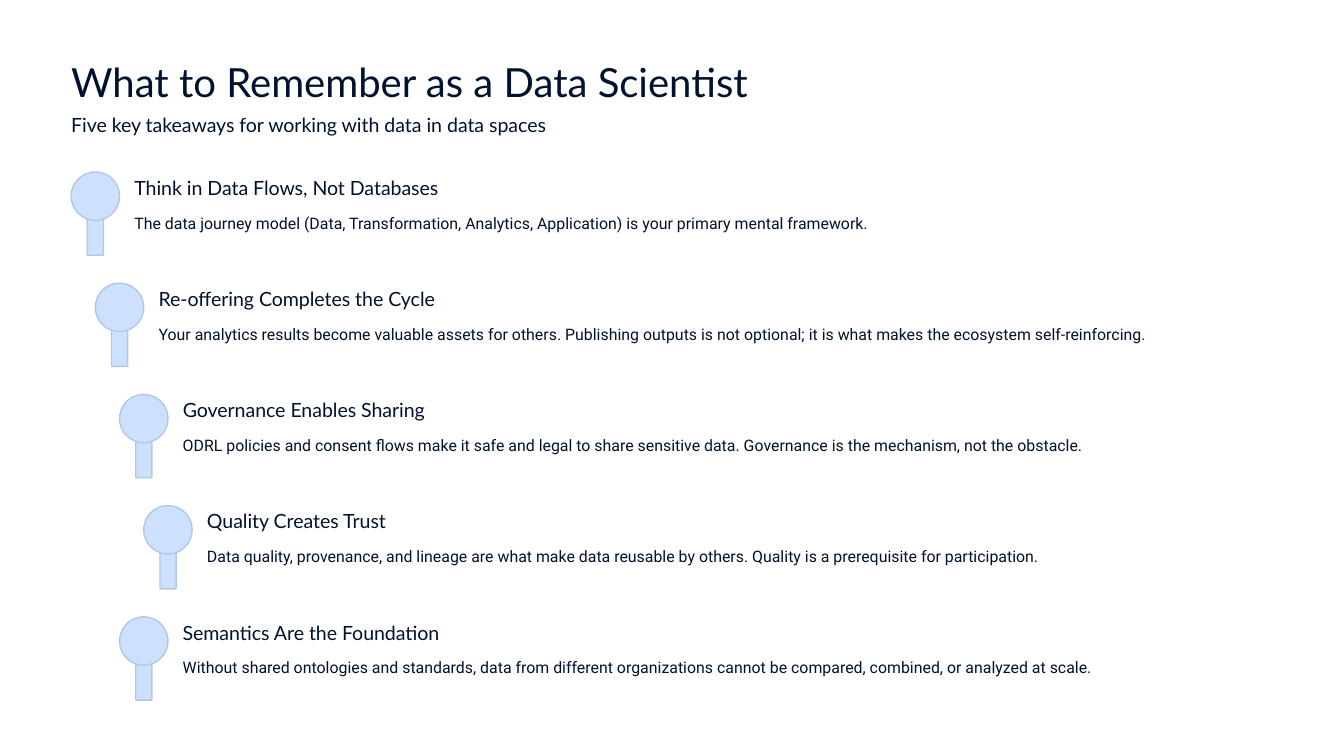
from pptx import Presentation
from pptx.dml.color import RGBColor
from pptx.enum.shapes import MSO_SHAPE
from pptx.enum.text import MSO_ANCHOR, MSO_AUTO_SIZE, PP_ALIGN
from pptx.util import Inches, Pt

ROUNDED = MSO_SHAPE.ROUNDED_RECTANGLE
TOP = MSO_ANCHOR.TOP
NO_FIT = MSO_AUTO_SIZE.NONE
LEFT = PP_ALIGN.LEFT

INK = "01122E"
PALE_BLUE = "CDE0FE"
EDGE_BLUE = "B3C6E4"


def color(value):
    return RGBColor.from_string(value)


def write(box, text, font_name, size, line_spacing):
    frame = box.text_frame
    frame.text = text
    frame.word_wrap = True
    frame.auto_size = NO_FIT
    frame.vertical_anchor = TOP
    frame.margin_left = frame.margin_right = 0
    frame.margin_top = frame.margin_bottom = 0
    para = frame.paragraphs[0]
    para.alignment = LEFT
    para.line_spacing = line_spacing
    para.space_before = Pt(0)
    font = para.runs[0].font
    font.name = font_name
    font.size = Pt(size)
    font.color.rgb = color(INK)


deck = Presentation()
deck.slide_width = Inches(10)
deck.slide_height = Inches(10 * 9 / 16)
page = deck.slides.add_slide(deck.slide_layouts[5])
page.background.fill.solid()
page.background.fill.fore_color.rgb = color("FFFFFF")

title = page.shapes.title
title.left, title.top = Inches(0.53), Inches(0.41)
title.width, title.height = Inches(5.91), Inches(0.38)
write(title, "What to Remember as a Data Scientist", "Lato", 21.5, 1.04)

subtitle = page.shapes.add_textbox(Inches(0.53), Inches(0.83), Inches(4.53), Inches(0.19))
write(subtitle, "Five key takeaways for working with data in data spaces", "Lato", 10.5, 1.04)

takeaways = [
    (0, 2.51, "Think in Data Flows, Not Databases",
     "The data journey model (Data, Transformation, Analytics, Application) "
     "is your primary mental framework."),
    (1, 2.26, "Re-offering Completes the Cycle",
     "Your analytics results become valuable assets for others. Publishing outputs "
     "is not optional; it is what makes the ecosystem self-reinforcing."),
    (2, 1.99, "Governance Enables Sharing",
     "ODRL policies and consent flows make it safe and legal to share sensitive data. "
     "Governance is the mechanism, not the obstacle."),
    (3, 1.52, "Quality Creates Trust",
     "Data quality, provenance, and lineage are what make data reusable by others. "
     "Quality is a prerequisite for participation."),
    (2, 2.1, "Semantics Are the Foundation",
     "Without shared ontologies and standards, data from different organizations "
     "cannot be compared, combined, or analyzed at scale."),
]
first_top, last_top = 1.28, 4.59
row_step = (last_top - first_top) / (len(takeaways) - 1)
right_edge = 9.46

for row, (indent, heading_width, heading, detail) in enumerate(takeaways):
    left = 0.53 + 0.18 * indent
    top = first_top + row_step * row
    text_left = left + 0.47

    marker_parts = [
        (left + 0.12, top + 0.08, 0.12, 0.54, 0.05),
        (left, top, 0.36, 0.36, 0.5),
    ]
    for part_left, part_top, width, height, rounding in marker_parts:
        part = page.shapes.add_shape(
            ROUNDED, Inches(part_left), Inches(part_top), Inches(width), Inches(height))
        part.adjustments[0] = rounding
        part.shadow.inherit = False
        part.fill.solid()
        part.fill.fore_color.rgb = color(PALE_BLUE)
        part.line.color.rgb = color(EDGE_BLUE)
        part.line.width = Pt(0.75)

    heading_box = page.shapes.add_textbox(
        Inches(text_left), Inches(top + 0.02), Inches(heading_width), Inches(0.19))
    write(heading_box, heading, "Lato", 10.5, 1.04)
    detail_box = page.shapes.add_textbox(
        Inches(text_left), Inches(top + 0.27), Inches(right_edge - text_left), Inches(0.18))
    write(detail_box, detail, "Roboto", 8.5, 1.26)

deck.save("out.pptx")
